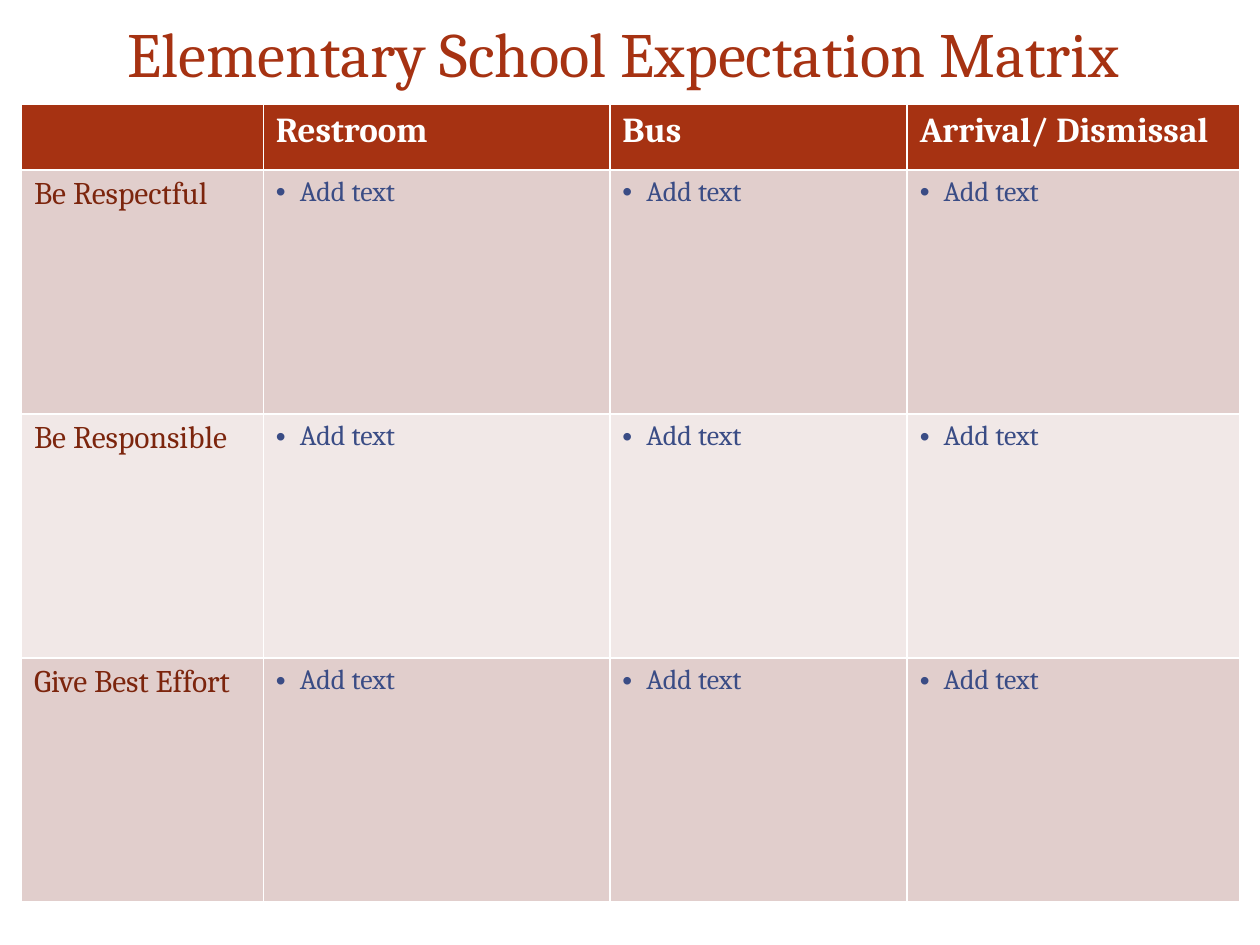
from lxml import etree
from pptx import Presentation
from pptx.dml.color import RGBColor
from pptx.enum.text import MSO_ANCHOR, PP_ALIGN
from pptx.oxml.ns import qn
from pptx.util import Inches, Pt

CENTER = PP_ALIGN.CENTER
MIDDLE = MSO_ANCHOR.MIDDLE
FONT = "Cambria"
COLORS = {
    "rust": "A63212",
    "brown": "7C250D",
    "blue": "3A4C85",
    "white": "FFFFFF",
    "band_dark": "E1CECC",
    "band_light": "F1E8E7",
}
FORMATS = {
    "title": {"size": Pt(36), "bold": False, "color": "rust"},
    "header": {"size": Pt(20), "bold": True, "color": "white"},
    "expectation": {"size": Pt(18), "bold": False, "color": "brown"},
    "entry": {"size": Pt(16), "bold": False, "color": "blue"},
}
HEADERS = ["", "Restroom", "Bus", "Arrival/ Dismissal"]
EXPECTATIONS = ["Be Respectful", "Be Responsible", "Give Best Effort"]
COLUMN_WIDTHS = [1.92, 2.75, 2.36, 2.64]
HEADER_HEIGHT = 0.52
BULLET_INDENT = 0.19


def color(name):
    return RGBColor.from_string(COLORS[name])


def write(para, text, format_name):
    span = para.add_run()
    span.text = text
    span.font.name = FONT
    for name, value in FORMATS[format_name].items():
        if name == "color":
            span.font.color.rgb = color(value)
        else:
            setattr(span.font, name, value)


def add_bullet(para):
    properties = para._p.get_or_add_pPr()
    properties.set("marL", str(Inches(BULLET_INDENT)))
    properties.set("indent", str(-Inches(BULLET_INDENT)))
    etree.SubElement(properties, qn("a:buFont")).set("typeface", "Arial")
    etree.SubElement(properties, qn("a:buChar")).set("char", "•")


def add_title(page, left, top, width, height):
    box = page.shapes.add_textbox(
        Inches(left), Inches(top), Inches(width), Inches(height))
    box.text_frame.word_wrap = True
    box.text_frame.vertical_anchor = MIDDLE
    para = box.text_frame.paragraphs[0]
    para.alignment = CENTER
    write(para, "Elementary School Expectation Matrix ", "title")


def fill_cell(cell, text, format_name, fill):
    cell.fill.solid()
    cell.fill.fore_color.rgb = color(fill)
    para = cell.text_frame.paragraphs[0]
    if format_name == "entry":
        add_bullet(para)
    if text:
        write(para, text, format_name)


def add_matrix(page, left, top, width, height):
    """The white cell borders come from the default table style."""
    table = page.shapes.add_table(
        len(EXPECTATIONS) + 1, len(HEADERS),
        Inches(left), Inches(top), Inches(width), Inches(height)).table
    for column, share in zip(table.columns, COLUMN_WIDTHS):
        column.width = Inches(width * share / sum(COLUMN_WIDTHS))
    body_height = (height - HEADER_HEIGHT) / len(EXPECTATIONS)
    for index, row in enumerate(table.rows):
        row.height = Inches(body_height if index else HEADER_HEIGHT)

    for column, header in enumerate(HEADERS):
        fill_cell(table.cell(0, column), header, "header", "rust")
    for row, expectation in enumerate(EXPECTATIONS, start=1):
        band = "band_dark" if row % 2 else "band_light"
        fill_cell(table.cell(row, 0), expectation, "expectation", band)
        for column in range(1, len(HEADERS)):
            fill_cell(table.cell(row, column), "Add text", "entry", band)


def main():
    deck = Presentation()
    deck.slide_width, deck.slide_height = Inches(10), Inches(7.5)
    page = deck.slides.add_slide(deck.slide_layouts[6])
    add_title(page, 0, 0.08, 10, 0.67)
    add_matrix(page, 0.17, 0.83, 9.67, 6.33)
    deck.save("out.pptx")


if __name__ == "__main__":
    main()
